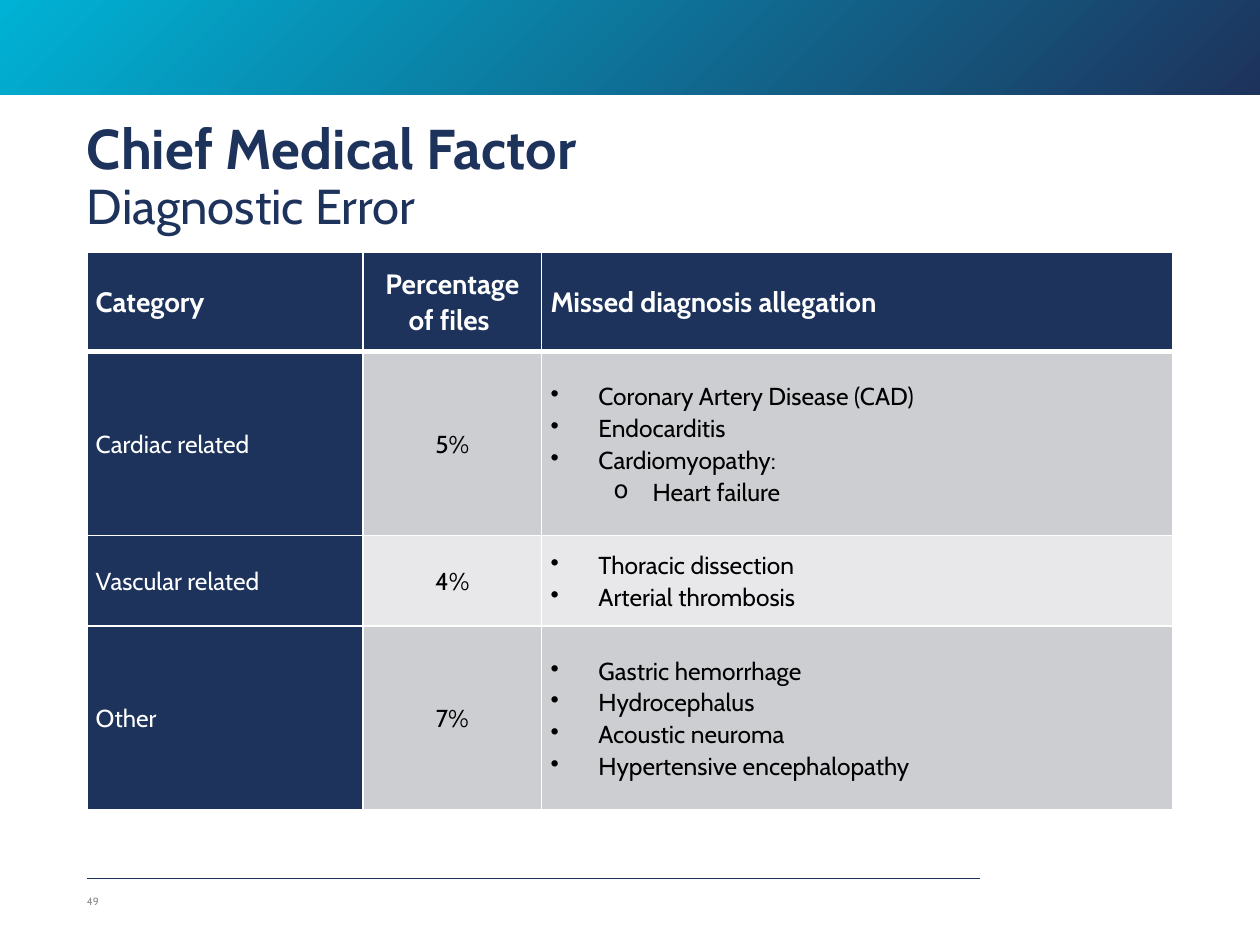
from lxml import etree
from pptx import Presentation
from pptx import util as u
from pptx.dml.color import RGBColor
from pptx.enum import shapes, text
from pptx.oxml.ns import qn

# Content
TITLE, SUB, PAGE = "Chief Medical Factor", "Diagnostic Error", "49"
HEAD = ("Category", "Percentage of files ", "Missed diagnosis allegation")
ROWS = [  # category, share, list of (level, allegation)
    ("Cardiac related", "5%", [(0, "Coronary Artery Disease (CAD)"), (0, "Endocarditis"),
                               (0, "Cardiomyopathy:"), (1, "Heart failure")]),
    ("Vascular related", "4%", [(0, "Thoracic dissection"), (0, "Arterial thrombosis")]),
    ("Other", "7%", [(0, "Gastric hemorrhage"), (0, "Hydrocephalus"),
                     (0, "Acoustic neuroma"), (0, "Hypertensive encephalopathy")]),
]
BULLETS = [("•", 0.38, -0.38), ("o", 0.81, -0.31)]  # sign, margin, indent by level

# Look
FONT, NAVY, CYAN, WHITE, BLACK, GREY = "Cabin", "1D335C", "00B2D5", "FFFFFF", "000000", "8C8C8C"
BANDS = ("CDCED2", "E8E8EA")
W, H, LEFT = 10, 7.5, 0.69
WIDE = W - 2 * LEFT
COLS = (2.19, 1.42, 5.01)
HIGH = (0.79, 1.46, 0.72, 1.46)


def rgb(code):
    return RGBColor.from_string(code)


def style(font, size, color, bold=False):
    font.name, font.size, font.bold = FONT, u.Pt(size), bold
    font.color.rgb = rgb(color)


def inches(*sizes):
    return [u.Inches(size) for size in sizes]


def bare(frame):
    frame.margin_left = frame.margin_right = frame.margin_top = frame.margin_bottom = 0
    frame.vertical_anchor = text.MSO_ANCHOR.MIDDLE
    frame.word_wrap = True


def bullet(para, level):
    sign, margin, indent = BULLETS[level]
    para.level = level
    props = para._p.get_or_add_pPr()
    props.set("marL", str(u.Inches(margin)))
    props.set("indent", str(u.Inches(indent)))
    etree.SubElement(props, qn("a:buChar")).set("char", sign)


def border(cell, side, points):
    line = etree.SubElement(cell._tc.get_or_add_tcPr(), qn("a:ln" + side))
    line.set("w", str(u.Pt(points)))
    solid = etree.SubElement(line, qn("a:solidFill"))
    etree.SubElement(solid, qn("a:srgbClr")).set("val", WHITE)


def fill_cell(cell, row, col, items):
    head = row == 0
    navy = head or col == 0
    cell.margin_left = cell.margin_right = u.Inches(0.07)
    cell.margin_top = cell.margin_bottom = 0
    cell.vertical_anchor = text.MSO_ANCHOR.MIDDLE
    for side in "LRTB":
        thick = (head and side == "B") or (row == 1 and side == "T")
        border(cell, side, 3 if thick else 1)
    cell.fill.solid()
    cell.fill.fore_color.rgb = rgb(NAVY if navy else BANDS[(row - 1) % 2])
    frame = cell.text_frame
    for n, (level, words) in enumerate(items):
        para = frame.add_paragraph() if n else frame.paragraphs[0]
        para.text = words
        para.line_spacing = 1.07
        if col == 1:
            para.alignment = text.PP_ALIGN.CENTER
        if col == 2 and not head:
            bullet(para, level)
        style(para.font, 16 if head else 14, WHITE if navy else BLACK, head)


prs = Presentation()
prs.slide_width, prs.slide_height = inches(W, H)
slide = prs.slides.add_slide(prs.slide_layouts[5])
parts = slide.shapes

# Top band, shaded outward from its lower right corner
band = parts.add_shape(shapes.MSO_SHAPE.RECTANGLE, *inches(0, 0, W, H / 10))
band.shadow.inherit = False
band.line.fill.background()
band.fill.gradient()
for stop, color, place in zip(band.fill.gradient_stops, (NAVY, CYAN), (0, 1)):
    stop.color.rgb, stop.position = rgb(color), place
grad = band._element.spPr.find(qn("a:gradFill"))
grad.remove(grad.find(qn("a:lin")))
shade = etree.SubElement(grad, qn("a:path"))
shade.set("path", "circle")
focus = etree.SubElement(shade, qn("a:fillToRect"))
focus.set("l", "100000")
focus.set("t", "100000")

# Footer rule and page number
rule = parts.add_connector(shapes.MSO_CONNECTOR.STRAIGHT, *inches(7.78, 6.97, LEFT, 6.97))
rule.line.color.rgb, rule.line.width = rgb(NAVY), u.Pt(0.4)
etree.SubElement(rule._element.spPr, qn("a:effectLst"))
page = parts.add_textbox(*inches(LEFT, 6.95, 0.38, 0.4)).text_frame
bare(page)
page.text = PAGE
style(page.paragraphs[0].font, 6, GREY)

# Title
title = parts.title
title.left, title.top, title.width, title.height = inches(LEFT, 0.83, WIDE, 1.17)
bare(title.text_frame)
title.text_frame.auto_size = text.MSO_AUTO_SIZE.NONE
para = title.text_frame.paragraphs[0]
para.alignment, para.line_spacing = text.PP_ALIGN.LEFT, 0.9
for words, size, bold in ((TITLE, 32, True), (SUB, 28, False)):
    if para.runs:
        para.add_line_break()
    run = para.add_run()
    run.text = words
    style(run.font, size, NAVY, bold)

# Table
grid = parts.add_table(len(HIGH), len(COLS), *inches(LEFT, 2, WIDE, sum(HIGH))).table
for col, width in zip(grid.columns, COLS):
    col.width = u.Inches(width)
for row, height in zip(grid.rows, HIGH):
    row.height = u.Inches(height)
for r, record in enumerate([HEAD] + ROWS):
    for c, entry in enumerate(record):
        items = [(0, entry)] if isinstance(entry, str) else entry
        fill_cell(grid.cell(r, c), r, c, items)

prs.save("out.pptx")
